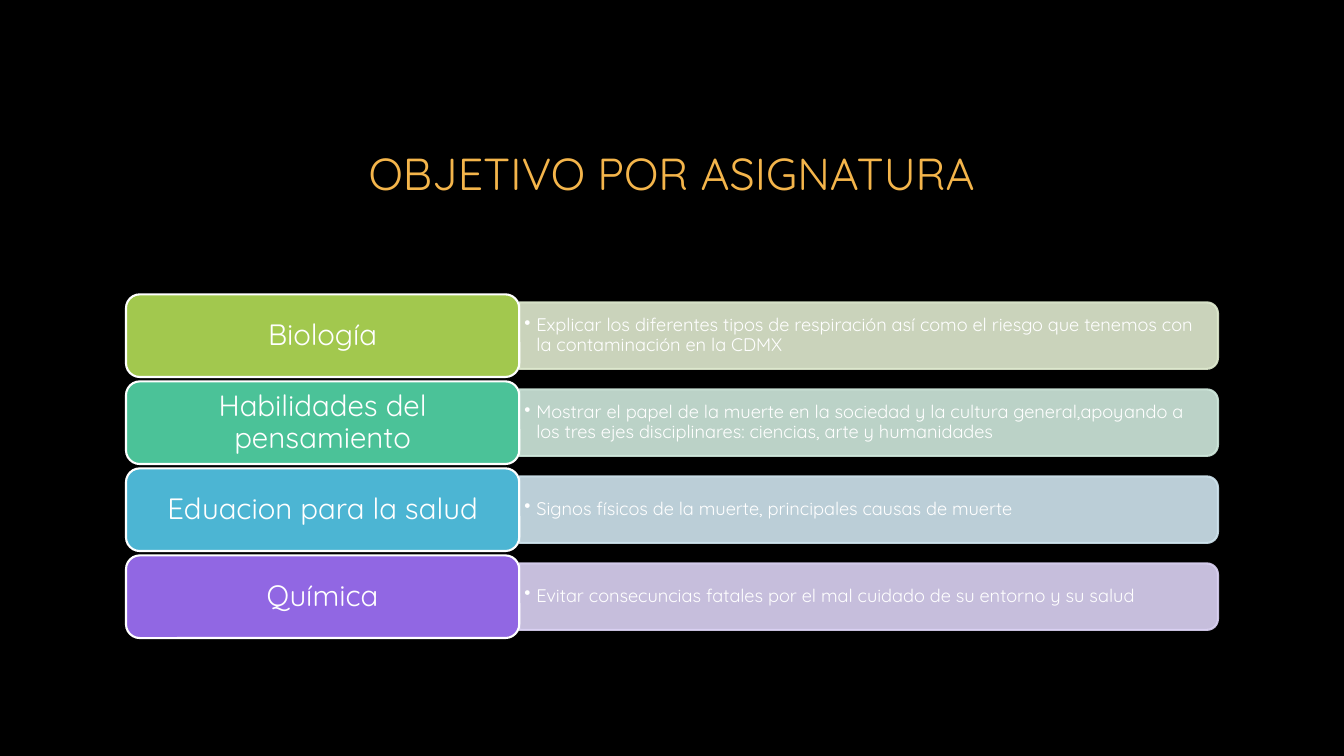
from dataclasses import dataclass

from lxml import etree
from pptx import Presentation
from pptx.dml.color import RGBColor
from pptx.enum.shapes import MSO_SHAPE
from pptx.enum.text import MSO_ANCHOR, MSO_AUTO_SIZE, PP_ALIGN
from pptx.oxml.ns import qn
from pptx.shapes.autoshape import Shape
from pptx.slide import Slide
from pptx.text.text import TextFrame
from pptx.util import Inches, Pt

ROUNDED = MSO_SHAPE.ROUNDED_RECTANGLE
ROUNDED_TOP = MSO_SHAPE.ROUND_2_SAME_RECTANGLE
MIDDLE = MSO_ANCHOR.MIDDLE
NO_AUTOFIT = MSO_AUTO_SIZE.NONE
CENTER = PP_ALIGN.CENTER
LEFT = PP_ALIGN.LEFT
TITLE_ONLY = 5


@dataclass(frozen=True)
class Theme:
    """Colours, font and type sizes of the deck."""

    font: str = "Quicksand"
    background: str = "000000"
    title: str = "F4B54B"
    text: str = "FFFFFF"
    title_size: float = 32
    label_size: float = 21
    goal_size: float = 13
    line_width: float = 1.5
    bar_opacity: int = 90


@dataclass(frozen=True)
class Grid:
    """Columns and rows of the slide, in inches."""

    width: float = 13.33
    height: float = 7.5
    left: float = 1.25
    label_width: float = 3.9
    goal_width: float = 6.93
    top: float = 2.92
    pitch: float = 0.8633
    label_height: float = 0.82
    bar_height: float = 0.66
    goal_height: float = 0.59

    @property
    def goal_left(self) -> float:
        """Return the left edge of the goal column."""
        return self.left + self.label_width

    def middle(self, row: int) -> float:
        """Return the vertical middle of a row."""
        return self.top + row * self.pitch + self.label_height / 2


@dataclass(frozen=True)
class Subject:
    """A school subject with its goal and its two colours."""

    name: str
    goal: str
    color: str
    tint: str


THEME = Theme()
GRID = Grid()
SUBJECTS = (
    Subject(
        "Biología",
        "Explicar los diferentes tipos de respiración así como el riesgo que "
        "tenemos con la contaminación en la CDMX",
        "A2C84E", "E0EBD0",
    ),
    Subject(
        "Habilidades del pensamiento",
        "Mostrar el papel de la muerte en la sociedad y la cultura "
        "general,apoyando a los tres ejes disciplinares: ciencias, arte y humanidades",
        "4BC298", "D0E9DD",
    ),
    Subject(
        "Eduacion para la salud",
        "Signos físicos de la muerte, principales causas de muerte",
        "4CB5D3", "D0E5EF",
    ),
    Subject(
        "Química",
        "Evitar consecuncias fatales por el mal cuidado de su entorno y su salud",
        "9167E3", "DCD3F4",
    ),
)


def write(frame: TextFrame, text: str, size: float, color: str,
          align: PP_ALIGN, spacing: float, inset: tuple[float, float]) -> None:
    """Fill a frame with one vertically centred paragraph."""
    frame.word_wrap = True
    frame.auto_size = NO_AUTOFIT
    frame.vertical_anchor = MIDDLE
    frame.margin_left = frame.margin_right = Inches(inset[0])
    frame.margin_top = frame.margin_bottom = Inches(inset[1])
    para = frame.paragraphs[0]
    para.text = text
    para.alignment = align
    para.line_spacing = spacing
    para.font.name = THEME.font
    para.font.size = Pt(size)
    para.font.color.rgb = RGBColor.from_string(color)


def paint(shape: Shape, fill: str, line: str) -> None:
    """Give a shape a solid fill, an outline and no shadow."""
    shape.shadow.inherit = False
    shape.fill.solid()
    shape.fill.fore_color.rgb = RGBColor.from_string(fill)
    shape.line.color.rgb = RGBColor.from_string(line)
    shape.line.width = Pt(THEME.line_width)


def add_bar(slide: Slide, subject: Subject, middle: float) -> None:
    """Draw the translucent bar, turned so its round corners face right."""
    center = GRID.goal_left + GRID.goal_width / 2
    bar = slide.shapes.add_shape(
        ROUNDED_TOP,
        Inches(center - GRID.bar_height / 2), Inches(middle - GRID.goal_width / 2),
        Inches(GRID.bar_height), Inches(GRID.goal_width),
    )
    bar.rotation = 90
    paint(bar, subject.tint, subject.tint)
    for color in bar.element.spPr.iter(qn("a:srgbClr")):
        etree.SubElement(color, qn("a:alpha"), val=str(THEME.bar_opacity * 1000))


def add_goal(slide: Slide, subject: Subject, middle: float) -> None:
    """Write the bulleted goal over its bar."""
    box = slide.shapes.add_textbox(
        Inches(GRID.goal_left), Inches(middle - GRID.goal_height / 2),
        Inches(GRID.goal_width - 0.03), Inches(GRID.goal_height),
    )
    write(box.text_frame, subject.goal, THEME.goal_size, THEME.text,
          LEFT, 0.9, (0.05, 0.03))
    properties = box.text_frame.paragraphs[0]._p.get_or_add_pPr()
    properties.set("marL", str(Inches(0.12)))
    properties.set("indent", str(Inches(-0.12)))
    bullet = etree.Element(qn("a:buChar"), char="•")
    properties.find(qn("a:lnSpc")).addnext(bullet)


def add_label(slide: Slide, subject: Subject, middle: float) -> None:
    """Draw the coloured box with the subject's name."""
    label = slide.shapes.add_shape(
        ROUNDED, Inches(GRID.left), Inches(middle - GRID.label_height / 2),
        Inches(GRID.label_width), Inches(GRID.label_height),
    )
    paint(label, subject.color, THEME.text)
    write(label.text_frame, subject.name, THEME.label_size, THEME.text,
          CENTER, 0.9, (0.09, 0.04))


def add_title(slide: Slide, text: str) -> None:
    """Place and format the title placeholder."""
    title = slide.shapes.title
    title.left, title.top = Inches(GRID.left), Inches(0.67)
    title.width = Inches(GRID.label_width + GRID.goal_width)
    title.height = Inches(2.08)
    write(title.text_frame, text, THEME.title_size, THEME.title,
          CENTER, 1.0, (0.1, 0.05))


def main() -> None:
    """Build the deck and save it."""
    deck = Presentation()
    deck.slide_width, deck.slide_height = Inches(GRID.width), Inches(GRID.height)
    slide = deck.slides.add_slide(deck.slide_layouts[TITLE_ONLY])
    slide.background.fill.solid()
    slide.background.fill.fore_color.rgb = RGBColor.from_string(THEME.background)
    add_title(slide, "OBJETIVO POR ASIGNATURA")
    for row, subject in enumerate(SUBJECTS):
        middle = GRID.middle(row)
        add_bar(slide, subject, middle)
        add_goal(slide, subject, middle)
        add_label(slide, subject, middle)
    deck.save("out.pptx")


if __name__ == "__main__":
    main()
